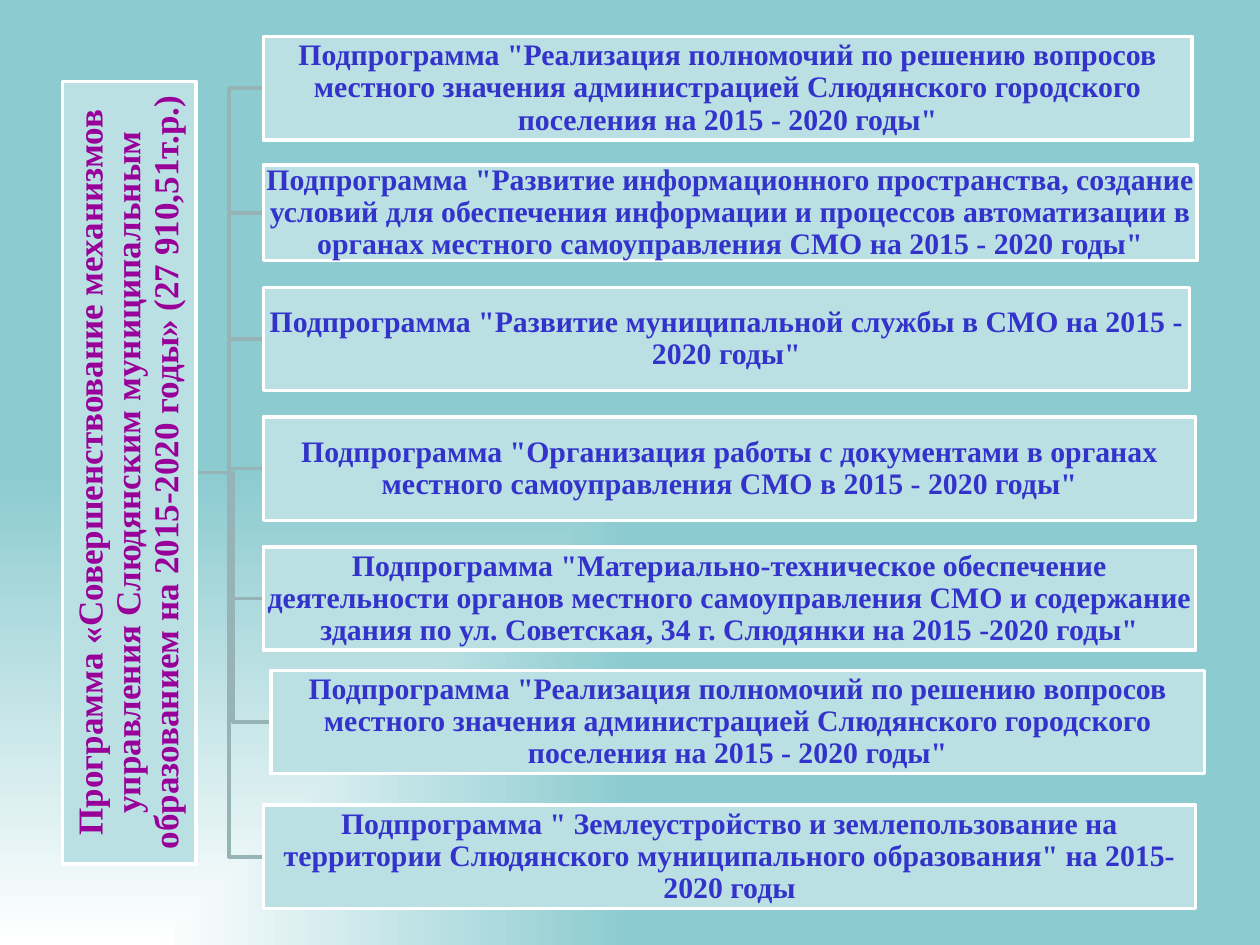
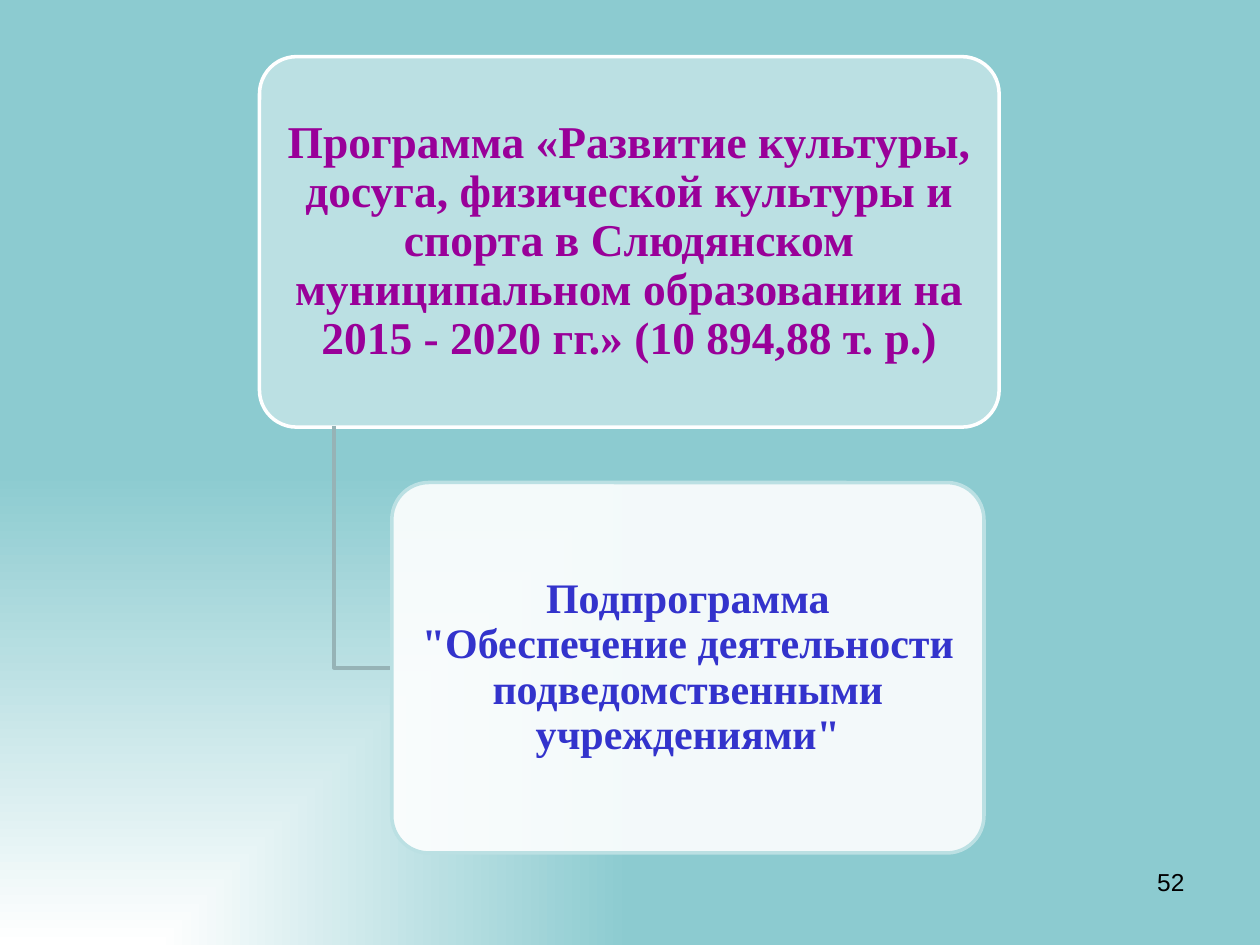
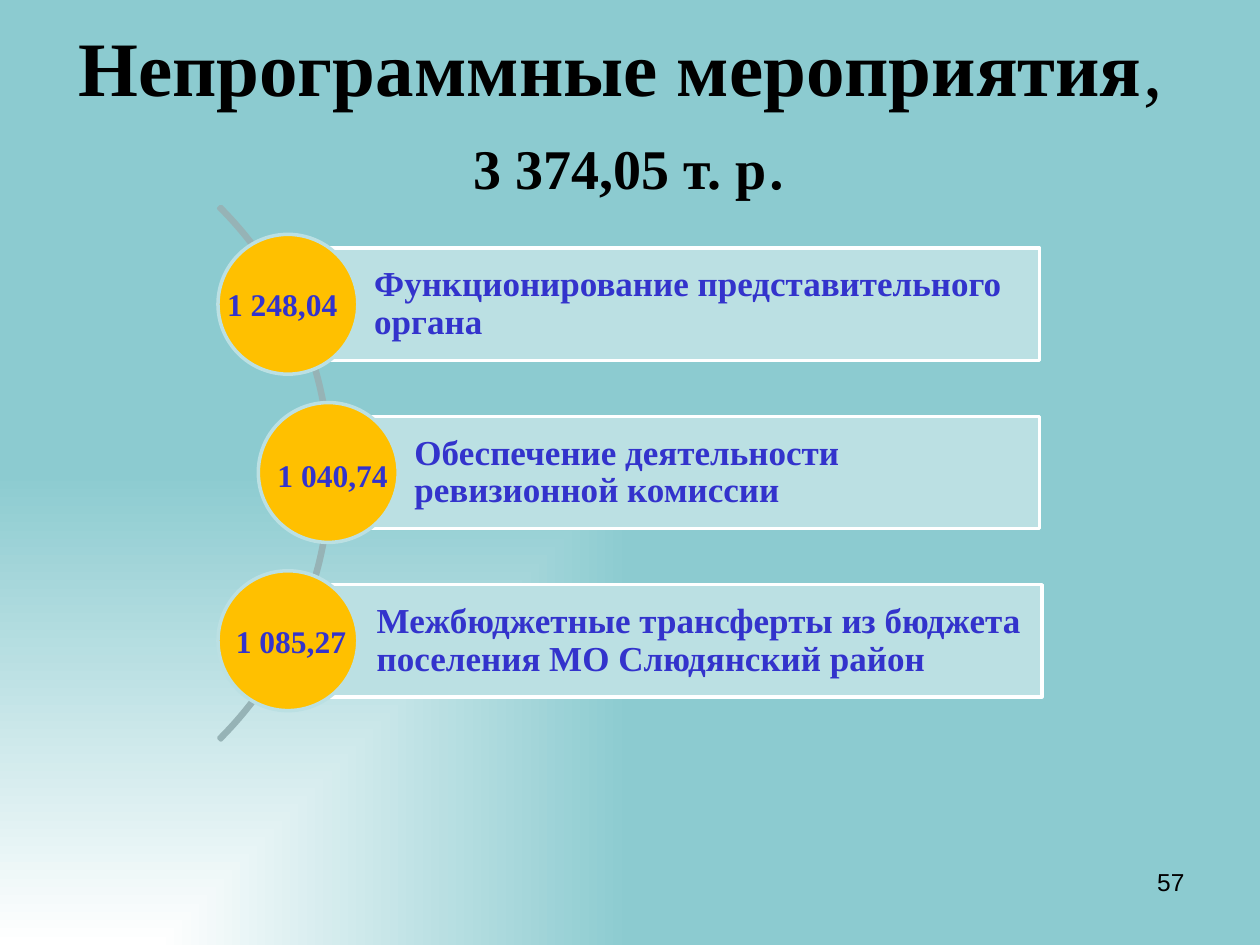
import pptx
import pptx.dml.color
import pptx.enum.shapes
import pptx.enum.text
import pptx.oxml
import pptx.oxml.ns
import pptx.util

Inches = pptx.util.Inches
Shape = pptx.enum.shapes.MSO_SHAPE
Align = pptx.enum.text.PP_ALIGN
Anchor = pptx.enum.text.MSO_ANCHOR


class Theme:
    white = pptx.dml.color.RGBColor.from_string("FFFFFF")
    black = pptx.dml.color.RGBColor.from_string("000000")
    backdrop = pptx.dml.color.RGBColor.from_string("8CCBD0")
    panel = pptx.dml.color.RGBColor.from_string("BBE0E3")
    branch = pptx.dml.color.RGBColor.from_string("96B3B6")
    badge = pptx.dml.color.RGBColor.from_string("FFC000")
    program = pptx.dml.color.RGBColor.from_string("990099")
    subprogram = pptx.dml.color.RGBColor.from_string("3333CC")
    line = pptx.util.Pt(2)
    serif = "Times New Roman"
    # Text styles: size, bold, font name, colour
    main = {"size": 26, "bold": True, "name": serif, "color": program}
    side = {**main, "size": 20}
    detail = {**main, "size": 24, "color": subprogram}
    row = {**detail, "size": 17}
    item = {**detail, "size": 20}
    value = {**detail, "size": 18}
    number = {"size": 14, "bold": False, "name": "Arial", "color": black}
    title = {"size": 44, "bold": True, "name": serif, "color": black}
    amount = {**title, "size": 32}


def add_panel(slide, kind, box, fill=None, line=None, runs=(), align=Align.CENTER,
              insets=(0.1, 0.05, 0.1, 0.05), spacing=0.9, anchor=Anchor.MIDDLE, wrap=True):
    """Add a preset shape, a text box (kind None) or fill the title (kind "title")."""
    lengths = [Inches(length) for length in box]
    if kind == "title":
        shape = slide.shapes.title
        shape.left, shape.top, shape.width, shape.height = lengths
    elif kind is None:
        shape = slide.shapes.add_textbox(*lengths)
    else:
        shape = slide.shapes.add_shape(kind, *lengths)
        shape.shadow.inherit = False
        shape.line.color.rgb = line
        shape.line.width = Theme.line
        if fill is None:
            shape.fill.background()
        else:
            shape.fill.solid()
            shape.fill.fore_color.rgb = fill
    frame = shape.text_frame
    left, top, right, bottom = map(Inches, insets)
    frame_format = {"word_wrap": wrap, "vertical_anchor": anchor,
                    "auto_size": pptx.enum.text.MSO_AUTO_SIZE.NONE,
                    "margin_left": left, "margin_top": top,
                    "margin_right": right, "margin_bottom": bottom}
    for name, setting in frame_format.items():
        setattr(frame, name, setting)
    paragraph = frame.paragraphs[0]
    paragraph.alignment = align
    paragraph.line_spacing = spacing
    for text, style in runs:
        if text == "\n":
            paragraph.add_line_break()
            continue
        run = paragraph.add_run()
        run.text = text
        for name, setting in style.items():
            if name == "color":
                run.font.color.rgb = setting
            else:
                setattr(run.font, name, pptx.util.Pt(setting) if name == "size" else setting)
    return shape


def add_branch(slide, points):
    """Draw an open bent line through points given in inches."""
    start, *rest = [(Inches(x), Inches(y)) for x, y in points]
    builder = slide.shapes.build_freeform(*start)
    builder.add_line_segments(rest, close=False)
    branch = builder.convert_to_shape()
    branch.shadow.inherit = False
    branch.fill.background()
    branch.line.color.rgb = Theme.branch
    branch.line.width = Theme.line


presentation = pptx.Presentation()
presentation.slide_width, presentation.slide_height = Inches(10), Inches(7.5)

# Shared background: white glow from the lower left corner
master = presentation.slide_master
background = master.background.fill
background.gradient()
for stop, color in zip(background.gradient_stops, (Theme.white, Theme.backdrop)):
    stop.color.rgb = color
direction = master.element.find(".//" + pptx.oxml.ns.qn("a:lin"))
direction.getparent().replace(direction, pptx.oxml.parse_xml(
    f'<a:path {pptx.oxml.ns.nsdecls("a")} path="rect">'
    '<a:fillToRect l="0" t="100000" r="100000" b="0"/></a:path>'))

title_layout, blank_layout = presentation.slide_layouts[5], presentation.slide_layouts[6]
management_slide = presentation.slides.add_slide(blank_layout)
culture_slide = presentation.slides.add_slide(blank_layout)
other_slide = presentation.slides.add_slide(title_layout)

# Slide 1: management program and its subprograms (left, top, width, height, text)
authority = ('Подпрограмма "Реализация полномочий по решению вопросов местного значения '
             'администрацией Слюдянского городского поселения на 2015 - 2020 годы"')
subprograms = [
    (2.09, 0.29, 7.37, 0.82, authority),
    (2.09, 1.31, 7.41, 0.76,
     'Подпрограмма "Развитие информационного пространства, создание условий для обеспечения '
     'информации и процессов автоматизации в органах местного самоуправления СМО '
     'на 2015 - 2020 годы"'),
    (2.09, 2.28, 7.35, 0.82,
     'Подпрограмма "Развитие муниципальной службы в СМО на 2015 - 2020 годы"'),
    (2.09, 3.31, 7.4, 0.82,
     'Подпрограмма "Организация работы с документами в органах местного самоуправления СМО '
     'в 2015 - 2020 годы"'),
    (2.09, 4.34, 7.4, 0.82,
     'Подпрограмма "Материально-техническое обеспечение деятельности органов местного '
     'самоуправления СМО и содержание здания по ул. Советская, 34 г. Слюдянки '
     'на 2015 -2020 годы"'),
    (2.15, 5.32, 7.41, 0.82, authority),
    (2.09, 6.39, 7.4, 0.82,
     'Подпрограмма " Землеустройство и землепользование на территории Слюдянского '
     'муниципального образования" на 2015-2020 годы'),
]
trunk_x, trunk_y = 1.55, 3.75
for left, top, width, height, text in reversed(subprograms):
    bend, middle = (trunk_x + left) / 2, top + height / 2
    add_branch(management_slide,
               [(trunk_x, trunk_y), (bend, trunk_y), (bend, middle), (left, middle)])

tight = (0.01,) * 4
program_box = add_panel(
    management_slide, Shape.RECTANGLE, (-2.08, 3.22, 6.21, 1.06), Theme.panel, Theme.white,
    [("Программа «Совершенствование механизмов управления Слюдянским муниципальным "
      "образованием на 2015-2020 годы» (27 910,51т.р.)", Theme.side)], insets=tight)
program_box.rotation = 270
for *box, text in subprograms:
    add_panel(management_slide, Shape.RECTANGLE, box, Theme.panel, Theme.white,
              [(text, Theme.row)], insets=tight)

# Slide 2: culture program with one subprogram
culture_box = add_panel(
    culture_slide, Shape.ROUNDED_RECTANGLE, (2.06, 0.45, 5.87, 2.94), Theme.panel, Theme.white,
    [("Программа «Развитие культуры, досуга, физической культуры и спорта в Слюдянском "
      "муниципальном образовании на 2015 - 2020 гг.» (10 894,88 т. р.)", Theme.main)],
    insets=(0.05, 0.04, 0.05, 0.04))
add_branch(culture_slide, [(2.65, 3.38), (2.65, 5.3), (3.11, 5.3)])
support_box = add_panel(
    culture_slide, Shape.ROUNDED_RECTANGLE, (3.11, 3.83, 4.7, 2.94), Theme.white, Theme.panel,
    [('Подпрограмма "Обеспечение деятельности подведомственными учреждениями"', Theme.detail)],
    insets=(0.05, 0.03, 0.05, 0.03))
for box in (culture_box, support_box):
    box.adjustments[0] = 0.1
support_color = support_box.fill._xPr.find(".//" + pptx.oxml.ns.qn("a:srgbClr"))
support_color.append(pptx.oxml.parse_xml(
    f'<a:alpha {pptx.oxml.ns.nsdecls("a")} val="90000"/>'))

# Slide 3: title, arc and three expense items
light_title = {**Theme.title, "bold": False}
add_panel(other_slide, "title", (0, 0.3, 10, 1.18), spacing=1.0, runs=[
    ("Непрограммные мероприятия", Theme.title), (", ", light_title), ("\n", None),
    ("3 374,05 т. р", Theme.amount), (".", light_title)])

arc = add_panel(other_slide, Shape.BLOCK_ARC, (-3.36, 0.76, 5.99, 5.99), line=Theme.branch)
for index, adjustment in enumerate((189, 27, 0.004)):
    arc.adjustments[index] = adjustment

# Bar left and width, circle left, value left and top, value, text
expenses = [
    (2.26, 5.99, 1.73, 1.69, 2.21, "1 248,04", "Функционирование представительного органа"),
    (2.58, 5.67, 2.05, 2.09, 3.57, "1 040,74", "Обеспечение деятельности ревизионной комиссии"),
    (2.28, 5.99, 1.73, 1.76, 4.89, "1 085,27",
     "Межбюджетные трансферты из бюджета поселения МО Слюдянский район"),
]
bar_height, circle_size, row_pitch = 0.89, 1.11, 1.335
for index, (left, width, circle_left, value_left, value_top, value, text) in enumerate(expenses):
    top = 1.97 + index * row_pitch
    circle_top = top - (circle_size - bar_height) / 2
    add_panel(other_slide, Shape.RECTANGLE, (left, top, width, bar_height),
              Theme.panel, Theme.white, [(text, Theme.item)], Align.LEFT,
              (0.71, 0.06, 0.06, 0.06))
    add_panel(other_slide, Shape.OVAL, (circle_left, circle_top, circle_size, circle_size),
              Theme.badge, Theme.panel)
    add_panel(other_slide, None, (value_left, value_top, 1.1, 0.4),
              runs=[(value, Theme.value)], spacing=1.0, anchor=Anchor.TOP, wrap=False)

# Page numbers
for slide, number in ((culture_slide, "52"), (other_slide, "57")):
    add_panel(slide, None, (7.17, 6.83, 2.33, 0.52), runs=[(number, Theme.number)],
              align=Align.RIGHT, spacing=1.0, anchor=Anchor.TOP)

presentation.save("out.pptx")
